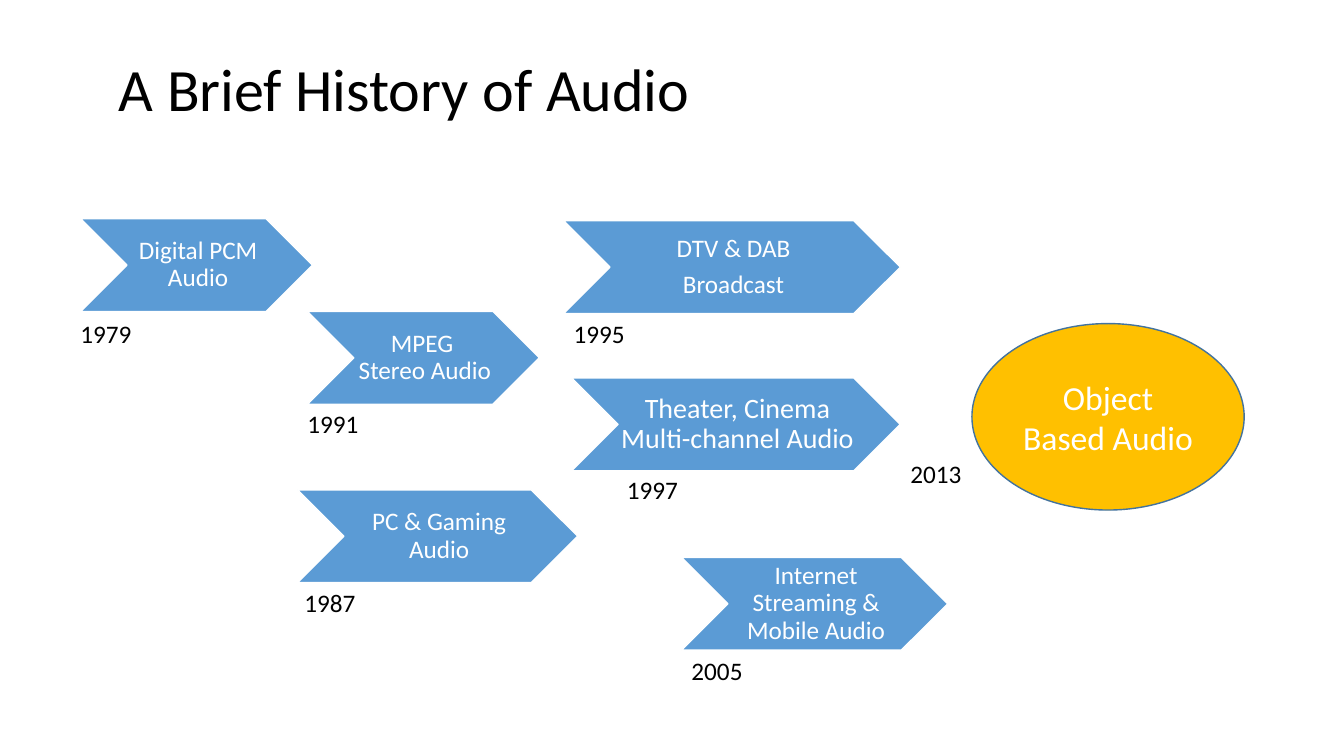
from dataclasses import dataclass

from pptx import Presentation
from pptx.dml.color import RGBColor
from pptx.enum.shapes import MSO_SHAPE
from pptx.enum.text import MSO_ANCHOR, MSO_AUTO_SIZE, PP_ALIGN
from pptx.shapes.autoshape import Shape
from pptx.slide import Slide
from pptx.text.text import _Paragraph as Paragraph
from pptx.util import Inches, Pt


@dataclass(frozen=True)
class Theme:
    font: str = "Calibri"
    white: RGBColor = RGBColor(0xFF, 0xFF, 0xFF)
    black: RGBColor = RGBColor(0, 0, 0)
    blue: RGBColor = RGBColor(0x5B, 0x9B, 0xD5)
    gold: RGBColor = RGBColor(0xFF, 0xC0, 0x00)
    outline: RGBColor = RGBColor(0x43, 0x73, 0x9E)
    title_size: float = 42.9
    goal_size: float = 24
    large_size: float = 20
    body_size: float = 18


THEME = Theme()
CHEVRON_HEIGHT = 0.92


@dataclass(frozen=True)
class Milestone:
    """A chevron; "\n" in a paragraph is a line break."""
    left: float
    top: float
    width: float
    paragraphs: tuple[str, ...]
    size: float = THEME.body_size


@dataclass(frozen=True)
class Year:
    text: str
    left: float
    top: float
    width: float = 0.71


MILESTONES = (
    Milestone(0.8, 2.17, 2.3, ("Digital PCM Audio",)),
    Milestone(3.05, 3.09, 2.3, ("MPEG \nStereo Audio",)),
    Milestone(5.67, 3.75, 3.26, ("Theater, Cinema Multi-channel Audio",), THEME.large_size),
    Milestone(2.95, 4.86, 2.78, ("PC & Gaming Audio",)),
    Milestone(6.76, 5.53, 2.64, ("Internet Streaming & Mobile Audio",)),
    Milestone(5.59, 2.19, 3.34, ("DTV & DAB", "Broadcast")),
)

YEARS = (
    Year("1979", 0.7, 3.11, 0.77),
    Year("1991", 2.95, 4.0, 0.77),
    Year("1997", 6.12, 4.66, 0.77),
    Year("2013", 8.93, 4.5),
    Year("1987", 2.92, 5.78),
    Year("2005", 6.76, 6.45),
    Year("1995", 5.59, 3.11),
)


def write(paragraph: Paragraph, text: str, size: float, color: RGBColor) -> None:
    for index, line in enumerate(text.split("\n")):
        if index:
            paragraph.add_line_break()
        run = paragraph.add_run()
        run.text = line
        run.font.name = THEME.font
        run.font.size = Pt(size)
        run.font.color.rgb = color


def add_filled(slide: Slide, preset: MSO_SHAPE, left: float, top: float, width: float,
               height: float, fill: RGBColor, line: RGBColor) -> Shape:
    shape = slide.shapes.add_shape(preset, Inches(left), Inches(top), Inches(width), Inches(height))
    shape.shadow.inherit = False
    shape.fill.solid()
    shape.fill.fore_color.rgb = fill
    shape.line.color.rgb = line
    shape.line.width = Pt(1)
    shape.text_frame.word_wrap = True
    shape.text_frame.vertical_anchor = MSO_ANCHOR.MIDDLE
    return shape


def add_title(slide: Slide, text: str) -> None:
    title = slide.shapes.add_textbox(Inches(1.08), Inches(0.57), Inches(11.38), Inches(0.72))
    frame = title.text_frame
    frame.word_wrap = True
    frame.vertical_anchor = MSO_ANCHOR.MIDDLE
    frame.paragraphs[0].line_spacing = 0.8
    write(frame.paragraphs[0], text, THEME.title_size, THEME.black)


def add_milestone(slide: Slide, milestone: Milestone) -> None:
    chevron = add_filled(slide, MSO_SHAPE.CHEVRON, milestone.left, milestone.top,
                         milestone.width, CHEVRON_HEIGHT, THEME.blue, THEME.white)
    frame = chevron.text_frame
    frame.margin_left, frame.margin_right = Inches(0.03), 0
    frame.margin_top = frame.margin_bottom = Inches(0.01)
    for index, text in enumerate(milestone.paragraphs):
        paragraph = frame.add_paragraph() if index else frame.paragraphs[0]
        paragraph.alignment = PP_ALIGN.CENTER
        paragraph.line_spacing = 0.9
        paragraph.space_after = Pt(6)
        write(paragraph, text, milestone.size, THEME.white)


def add_goal(slide: Slide, text: str) -> None:
    goal = add_filled(slide, MSO_SHAPE.OVAL, 9.64, 3.21, 2.7, 1.85, THEME.gold, THEME.outline)
    paragraph = goal.text_frame.paragraphs[0]
    paragraph.alignment = PP_ALIGN.CENTER
    write(paragraph, text, THEME.goal_size, THEME.white)


def add_year(slide: Slide, year: Year) -> None:
    label = slide.shapes.add_textbox(Inches(year.left), Inches(year.top),
                                     Inches(year.width), Inches(0.4))
    frame = label.text_frame
    frame.word_wrap = False
    frame.auto_size = MSO_AUTO_SIZE.SHAPE_TO_FIT_TEXT
    write(frame.paragraphs[0], year.text, THEME.body_size, THEME.black)


def main() -> None:
    deck = Presentation()
    deck.slide_width, deck.slide_height = Inches(13.33), Inches(7.5)
    slide = deck.slides.add_slide(deck.slide_layouts[6])

    # Heading
    add_title(slide, "A Brief History of Audio")

    # Timeline steps and where they lead
    for milestone in MILESTONES:
        add_milestone(slide, milestone)
    add_goal(slide, "Object Based Audio")

    # Dates
    for year in YEARS:
        add_year(slide, year)

    deck.save("out.pptx")


if __name__ == "__main__":
    main()
